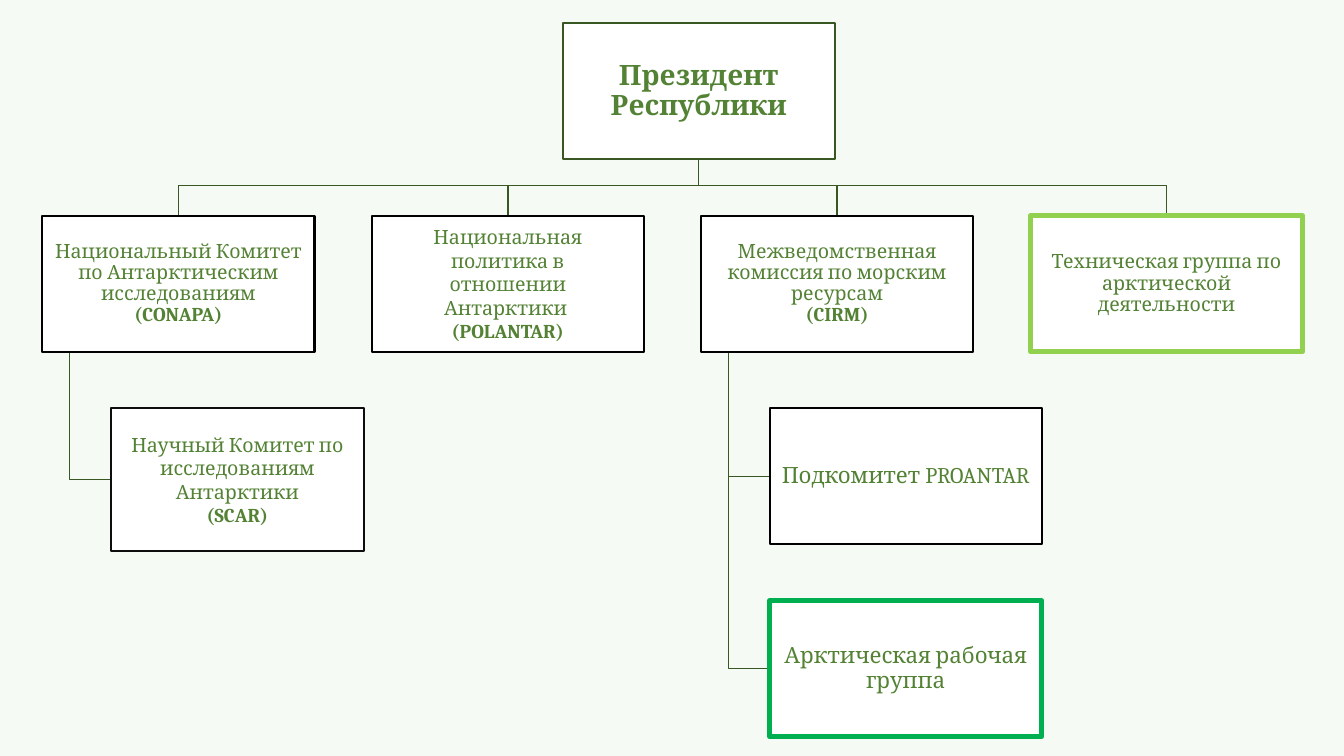
from dataclasses import dataclass

from lxml import etree
from pptx import Presentation
from pptx.dml.color import RGBColor
from pptx.enum.shapes import MSO_SHAPE
from pptx.enum.text import MSO_ANCHOR, PP_ALIGN
from pptx.oxml.ns import qn
from pptx.util import Inches, Pt

RECTANGLE = MSO_SHAPE.RECTANGLE
MIDDLE = MSO_ANCHOR.MIDDLE
CENTER = PP_ALIGN.CENTER

BOX_WIDTH, BOX_HEIGHT = 2.7, 1.35
FIRST_LEFT, COLUMN_STEP = 0.42, 9.8 / 3
FIRST_TOP, ROW_STEP = 0.23, 1.91
ROOT_LEFT = 5.58
TRUNK_INSET, CHILD_INDENT = 0.27, 0.68
BUS_DROP = 0.26


@dataclass(frozen=True)
class Theme:
    font: str = "Cambria"
    background: str = "F6FAF4"
    fill: str = "FFFFFF"
    text: str = "548235"
    line: str = "385723"
    border: str = "000000"
    soft_border: str = "0D0D0D"
    lime: str = "92D050"
    green: str = "00B050"
    root_size: float = 20
    body_size: float = 14
    group_size: float = 16
    line_width: float = 1
    border_width: float = 1.5
    accent_width: float = 3.5


@dataclass(frozen=True)
class Place:
    left: float
    top: float
    width: float = BOX_WIDTH
    height: float = BOX_HEIGHT

    @property
    def center(self):
        return self.left + self.width / 2

    @property
    def middle(self):
        return self.top + self.height / 2

    @property
    def bottom(self):
        return self.top + self.height


class OrgChart:
    def __init__(self, page, theme):
        self.page = page
        self.theme = theme
        background = page.background.fill
        background.solid()
        background.fore_color.rgb = RGBColor.from_string(theme.background)

    def outline(self, shape, color, width):
        shape.line.color.rgb = RGBColor.from_string(color)
        shape.line.width = Pt(width)
        shape.shadow.inherit = False

    def elbow(self, *points):
        start, *rest = [(Inches(x), Inches(y)) for x, y in points]
        builder = self.page.shapes.build_freeform(*start)
        builder.add_line_segments(rest, close=False)
        line = builder.convert_to_shape()
        line.fill.background()
        self.outline(line, self.theme.line, self.theme.line_width)

    def branch(self, parent, child):
        bus = parent.bottom + BUS_DROP
        self.elbow((parent.center, parent.bottom), (parent.center, bus),
                   (child.center, bus), (child.center, child.top))

    def hang(self, parent, child):
        trunk = parent.left + TRUNK_INSET
        self.elbow((trunk, parent.bottom), (trunk, child.middle), (child.left, child.middle))

    def box(self, place, text, size, acronym="", border=None, width=None,
            bold=False, spacing=0.9, inset=0.01):
        theme = self.theme
        box = self.page.shapes.add_shape(
            RECTANGLE, Inches(place.left), Inches(place.top),
            Inches(place.width), Inches(place.height))
        box.fill.solid()
        box.fill.fore_color.rgb = RGBColor.from_string(theme.fill)
        self.outline(box, border or theme.border, width or theme.border_width)
        frame = box.text_frame
        frame.word_wrap = True
        frame.vertical_anchor = MIDDLE
        frame.margin_left = frame.margin_right = Inches(inset)
        frame.margin_top = frame.margin_bottom = Inches(0.01)
        para = frame.paragraphs[0]
        para.alignment = CENTER
        para.line_spacing = spacing
        self.span(para, text, size, bold)
        if acronym:
            para.add_line_break()
            self.span(para, acronym, size, True)

    def span(self, para, text, size, bold):
        span = para.add_run()
        span.text = text
        font = span.font
        font.name = self.theme.font
        font.size = Pt(size)
        font.bold = bold
        font.color.rgb = RGBColor.from_string(self.theme.text)
        complex_font = etree.SubElement(span._r.get_or_add_rPr(), qn("a:cs"))
        complex_font.set("typeface", self.theme.font)


def main():
    deck = Presentation()
    deck.slide_width, deck.slide_height = Inches(13.33), Inches(7.5)
    page = deck.slides.add_slide(deck.slide_layouts[6])
    theme = Theme()
    chart = OrgChart(page, theme)

    rows = [FIRST_TOP + ROW_STEP * row for row in range(4)]
    president = Place(ROOT_LEFT, rows[0])
    bodies = [Place(FIRST_LEFT + COLUMN_STEP * column, rows[1]) for column in range(4)]
    conapa, polantar, cirm, technical = bodies
    scar = Place(conapa.left + CHILD_INDENT, rows[2], 2.51, 1.42)
    proantar, arctic = [Place(cirm.left + CHILD_INDENT, top) for top in rows[2:]]

    for body in bodies:
        chart.branch(president, body)
    for parent, child in ((conapa, scar), (cirm, proantar), (cirm, arctic)):
        chart.hang(parent, child)

    chart.box(president, "Президент Республики", theme.root_size,
              border=theme.line, bold=True)
    chart.box(conapa, "Национальный Комитет по Антарктическим исследованиям",
              theme.body_size, "(CONAPA)")
    chart.box(polantar, "Национальная политика в отношении Антарктики ",
              theme.body_size, "(POLANTAR)", spacing=1.0, inset=0.33)
    chart.box(cirm, "Межведомственная комиссия по морским ресурсам",
              theme.body_size, "(CIRM)")
    chart.box(technical, "Техническая группа по арктической деятельности",
              theme.body_size, border=theme.lime, width=theme.accent_width)
    chart.box(scar, "Научный Комитет по исследованиям Антарктики",
              theme.body_size, "(SCAR)", border=theme.soft_border, spacing=1.0, inset=0.12)
    chart.box(proantar, "Подкомитет PROANTAR", theme.group_size)
    chart.box(arctic, "Арктическая рабочая группа", theme.group_size,
              border=theme.green, width=theme.accent_width)

    deck.save("out.pptx")


if __name__ == "__main__":
    main()
